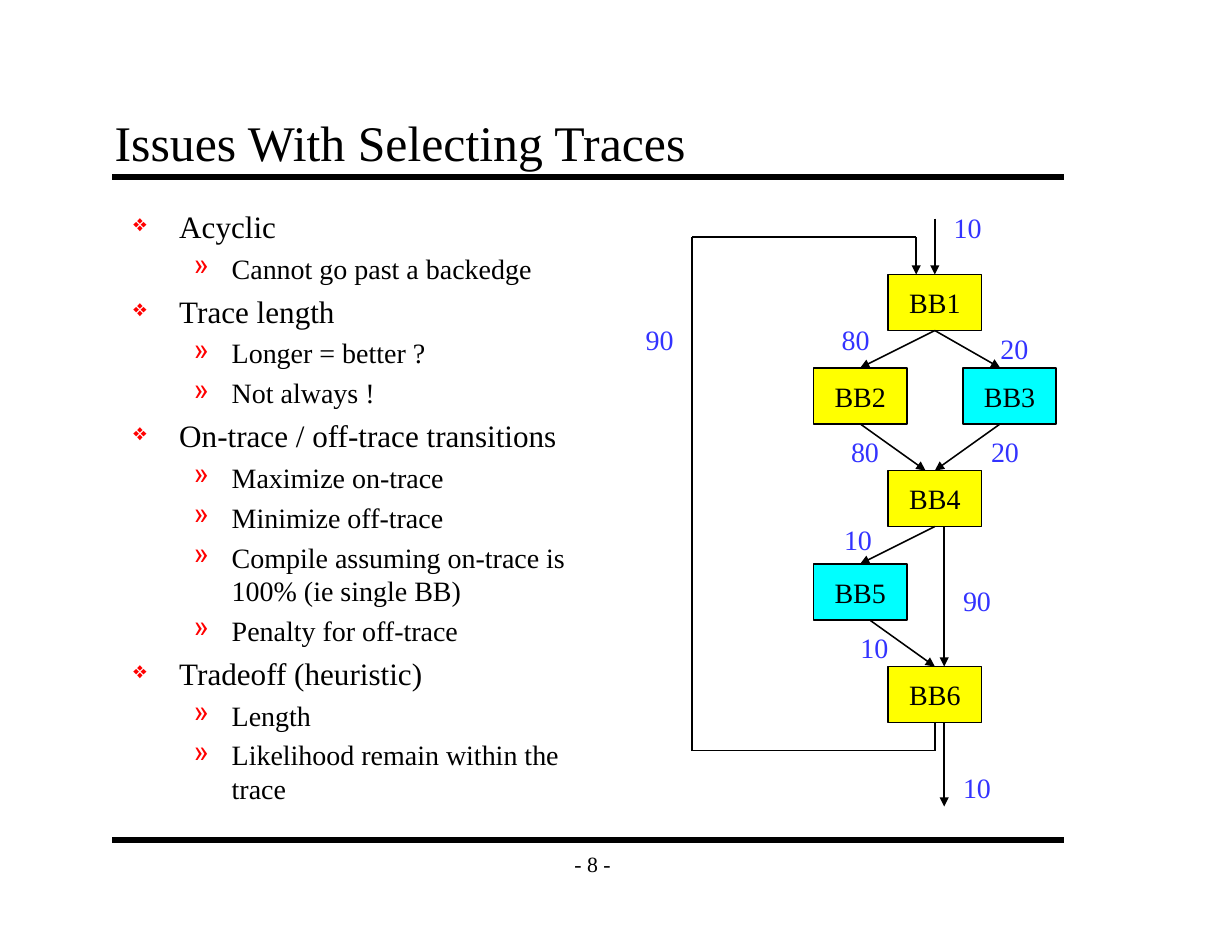
"""Build the slide on issues with selecting traces."""
from typing import NamedTuple

from lxml.etree import SubElement
from pptx import Presentation
from pptx.dml.color import RGBColor
from pptx.enum.shapes import MSO_CONNECTOR, MSO_SHAPE
from pptx.enum.text import MSO_ANCHOR, MSO_AUTO_SIZE, PP_ALIGN
from pptx.oxml.ns import qn
from pptx.slide import Slide
from pptx.text.text import TextFrame, _Paragraph
from pptx.util import Pt

BLACK = RGBColor(0x00, 0x00, 0x00)
RED = RGBColor(0xFF, 0x00, 0x00)
BLUE = RGBColor(0x33, 0x33, 0xFF)
YELLOW = RGBColor(0xFF, 0xFF, 0x00)
CYAN = RGBColor(0x00, 0xFF, 0xFF)
FONT = "Times New Roman"
BLOCK_WIDTH, BLOCK_HEIGHT = 60, 36


class Block(NamedTuple):
    name: str
    left: float
    top: float
    color: RGBColor


class Edge(NamedTuple):
    x1: float
    y1: float
    x2: float
    y2: float
    arrow: bool = True
    width: float = 1


class Label(NamedTuple):
    text: str
    left: float
    top: float


class Level(NamedTuple):
    size: float
    margin: float
    hanging: float
    space: float
    bullet: str
    bullet_percent: int


LEVELS = [
    Level(20, 29.5, 29.5, 4.6, "❖", 75),
    Level(18, 63.25, 24.5, 4.1, "»", 100),
]

OUTLINE = [
    (0, "Acyclic"),
    (1, "Cannot go past a backedge"),
    (0, "Trace length"),
    (1, "Longer = better ?"),
    (1, "Not always !"),
    (0, "On-trace / off-trace transitions"),
    (1, "Maximize on-trace"),
    (1, "Minimize off-trace"),
    (1, "Compile assuming on-trace is 100% (ie single BB)"),
    (1, "Penalty for off-trace"),
    (0, "Tradeoff (heuristic)"),
    (1, "Length"),
    (1, "Likelihood remain within the trace"),
]

LEFT, MIDDLE, RIGHT = 523, 571, 619
ROWS = [176.5, 236.5, 302.5, 362.5, 428.5]
FEET = [row + BLOCK_HEIGHT for row in ROWS]
CENTER, EXIT, LOOP = MIDDLE + 30, MIDDLE + 36, 445
LEFT_CENTER, RIGHT_CENTER = LEFT + 30, RIGHT + 24
LOOP_TOP, LOOP_BOTTOM, LOOP_ENTRY = 152.5, 482.5, 589

BLOCKS = [
    Block("BB1", MIDDLE, ROWS[0], YELLOW),
    Block("BB2", LEFT, ROWS[1], YELLOW),
    Block("BB3", RIGHT, ROWS[1], CYAN),
    Block("BB4", MIDDLE, ROWS[2], YELLOW),
    Block("BB5", LEFT, ROWS[3], CYAN),
    Block("BB6", MIDDLE, ROWS[4], YELLOW),
]

EDGES = [
    Edge(72, 113.75, 684, 113.75, False, 4),
    Edge(72, 540, 684, 540, False, 4),
    Edge(CENTER, 140.5, CENTER, ROWS[0]),
    Edge(CENTER, FEET[0], LEFT_CENTER, ROWS[1]),
    Edge(CENTER, FEET[0], RIGHT_CENTER, ROWS[1]),
    Edge(LEFT_CENTER, FEET[1], 595, ROWS[2]),
    Edge(RIGHT_CENTER, FEET[1], CENTER, ROWS[2]),
    Edge(CENTER, FEET[2], LEFT_CENTER, ROWS[3]),
    Edge(559, FEET[3], CENTER, ROWS[4]),
    Edge(EXIT, FEET[2], EXIT, ROWS[4]),
    Edge(EXIT, FEET[4], EXIT, 518.5),
    Edge(CENTER, FEET[4], CENTER, LOOP_BOTTOM, False),
    Edge(CENTER, LOOP_BOTTOM, LOOP, LOOP_BOTTOM, False),
    Edge(LOOP, LOOP_BOTTOM, LOOP, LOOP_TOP, False),
    Edge(LOOP, LOOP_TOP, LOOP_ENTRY, LOOP_TOP, False),
    Edge(LOOP_ENTRY, LOOP_TOP, LOOP_ENTRY, ROWS[0]),
]

LABELS = [
    Label("10", 606, 132),
    Label("90", 408, 204),
    Label("80", 534, 204),
    Label("20", 636, 209.5),
    Label("80", 540, 276),
    Label("20", 630, 276),
    Label("10", 535.5, 332.5),
    Label("90", 612, 371.5),
    Label("10", 546, 402),
    Label("10", 612, 491.5),
]


def style(para: _Paragraph, size: float, color: RGBColor = BLACK) -> None:
    for span in para.runs:
        span.font.name = FONT
        span.font.size = Pt(size)
        span.font.color.rgb = color


def add_text_frame(page: Slide, left: float, top: float, width: float,
                   height: float, inset: tuple[float, float]) -> TextFrame:
    box = page.shapes.add_textbox(Pt(left), Pt(top), Pt(width), Pt(height))
    frame = box.text_frame
    frame.margin_left = frame.margin_right = Pt(inset[0])
    frame.margin_top = frame.margin_bottom = Pt(inset[1])
    return frame


def add_edge(page: Slide, edge: Edge) -> None:
    line = page.shapes.add_connector(
        MSO_CONNECTOR.STRAIGHT, Pt(edge.x1), Pt(edge.y1), Pt(edge.x2), Pt(edge.y2))
    line.line.color.rgb = BLACK
    line.line.width = Pt(edge.width)
    if edge.arrow:
        SubElement(line.line._get_or_add_ln(), qn("a:tailEnd"), type="triangle")
    SubElement(line._element.spPr, qn("a:effectLst"))


def add_block(page: Slide, block: Block) -> None:
    box = page.shapes.add_shape(MSO_SHAPE.RECTANGLE, Pt(block.left), Pt(block.top),
                                Pt(BLOCK_WIDTH), Pt(BLOCK_HEIGHT))
    box.shadow.inherit = False
    box.fill.solid()
    box.fill.fore_color.rgb = block.color
    box.line.color.rgb = BLACK
    box.line.width = Pt(1)
    frame = box.text_frame
    frame.text = block.name
    frame.word_wrap = False
    frame.vertical_anchor = MSO_ANCHOR.MIDDLE
    frame.paragraphs[0].alignment = PP_ALIGN.CENTER
    style(frame.paragraphs[0], 18)


def add_label(page: Slide, label: Label) -> None:
    frame = add_text_frame(page, label.left, label.top, 32.5, 29, (7.2, 3.6))
    frame.text = label.text
    frame.word_wrap = False
    frame.auto_size = MSO_AUTO_SIZE.SHAPE_TO_FIT_TEXT
    style(frame.paragraphs[0], 18, BLUE)


def format_outline(para: _Paragraph, depth: int) -> None:
    level = LEVELS[depth]
    para.level = depth
    para.space_before = Pt(level.space)
    style(para, level.size)
    properties = para._p.get_or_add_pPr()
    properties.set("marL", str(Pt(level.margin)))
    properties.set("indent", str(-Pt(level.hanging)))
    color = SubElement(properties, qn("a:buClr"))
    SubElement(color, qn("a:srgbClr"), val=str(RED))
    SubElement(properties, qn("a:buSzPct"), val=str(level.bullet_percent * 1000))
    SubElement(properties, qn("a:buChar"), char=level.bullet)


def main() -> None:
    deck = Presentation()
    deck.slide_width, deck.slide_height = Pt(792), Pt(612)
    page = deck.slides.add_slide(deck.slide_layouts[6])

    title = add_text_frame(page, 66, 66, 612, 48, (7.75, 4))
    title.text = "Issues With Selecting Traces"
    title.word_wrap = True
    title.vertical_anchor = MSO_ANCHOR.BOTTOM
    style(title.paragraphs[0], 32)

    body = add_text_frame(page, 78, 129.5, 297, 410.5, (7.75, 4))
    body.word_wrap = True
    body.text = "\n".join(text for _, text in OUTLINE)
    for para, (depth, _) in zip(body.paragraphs, OUTLINE):
        format_outline(para, depth)

    number = add_text_frame(page, 354, 540, 54, 30, (7.75, 4))
    number.text = "- 8 -"
    number.word_wrap = False
    number.vertical_anchor = MSO_ANCHOR.MIDDLE
    number.paragraphs[0].alignment = PP_ALIGN.CENTER
    style(number.paragraphs[0], 14)

    for block in BLOCKS:
        add_block(page, block)
    for edge in EDGES:
        add_edge(page, edge)
    for label in LABELS:
        add_label(page, label)
    deck.save("out.pptx")


if __name__ == "__main__":
    main()
